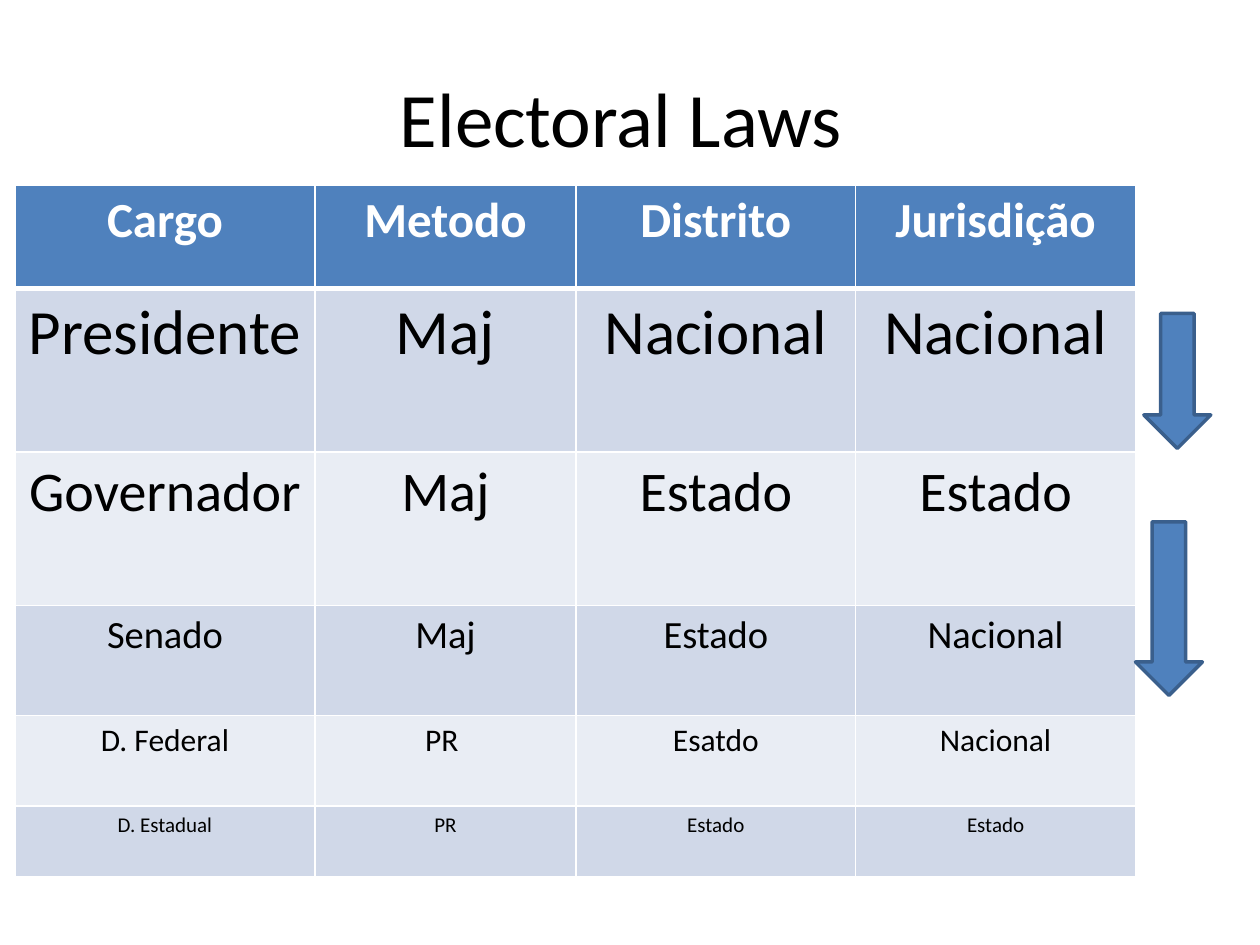
from dataclasses import dataclass

import pptx
import pptx.dml.color
import pptx.enum.shapes
import pptx.enum.text
import pptx.oxml
import pptx.oxml.ns
import pptx.slide
import pptx.table
import pptx.text.text
import pptx.util
from pptx.util import Cm


@dataclass(frozen=True)
class Theme:
    font: str = "Calibri"
    text: str = "000000"
    light: str = "FFFFFF"
    accent: str = "4F81BD"
    outline: str = "3A5F8C"
    bands: tuple[str, str] = ("D0D8E8", "E9EDF4")
    title_size: int = 44
    header_size: int = 28
    thin_border: float = 1
    header_border: float = 3
    arrow_line: float = 2


@dataclass(frozen=True)
class Row:
    height: float
    size: int
    labels: tuple[str, ...]


@dataclass(frozen=True)
class Arrow:
    left: float
    top: float
    height: float
    width: float = 1.35


THEME = Theme()
COLUMN_WIDTHS = (6.05, 5.26, 5.64, 5.64)
ROWS = (
    Row(2.08, THEME.header_size, ("Cargo", "Metodo", "Distrito", "Jurisdição")),
    Row(3.3, 36, ("Presidente", "Maj", "Nacional", "Nacional")),
    Row(3.1, 32, ("Governador", "Maj", "Estado", "Estado")),
    Row(2.21, 22, ("Senado", "Maj", "Estado", "Nacional")),
    Row(1.83, 18, ("D. Federal", "PR ", "Esatdo", "Nacional")),
    Row(1.42, 12, ("D. Estadual", "PR", "Estado", "Estado")),
)
ARROWS = (Arrow(23.06, 6.32, 2.72), Arrow(22.89, 10.52, 3.5))


def rgb(value: str) -> pptx.dml.color.RGBColor:
    return pptx.dml.color.RGBColor.from_string(value)


def write_centred(frame: pptx.text.text.TextFrame, text: str, size: int,
                  color: str, bold: bool = False) -> None:
    frame.text = text
    para = frame.paragraphs[0]
    para.alignment = pptx.enum.text.PP_ALIGN.CENTER
    for span in para.runs:
        span.font.name = THEME.font
        span.font.size = pptx.util.Pt(size)
        span.font.bold = bold
        span.font.color.rgb = rgb(color)


def add_borders(cell: pptx.table._Cell, top: float, bottom: float) -> None:
    """Draw all four cell borders; call before filling, as the schema orders them."""
    properties = cell._tc.get_or_add_tcPr()
    sides = {"L": THEME.thin_border, "R": THEME.thin_border, "T": top, "B": bottom}
    for side, points in sides.items():
        properties.append(pptx.oxml.parse_xml(
            f'<a:ln{side} {pptx.oxml.ns.nsdecls("a")} w="{pptx.util.Pt(points)}">'
            f'<a:solidFill><a:srgbClr val="{THEME.light}"/></a:solidFill></a:ln{side}>'
        ))


def add_title(page: pptx.slide.Slide, text: str) -> None:
    title = page.shapes.title
    title.left, title.top = Cm(1.27), Cm(0.76)
    title.width, title.height = Cm(22.86), Cm(3.18)
    title.text_frame.vertical_anchor = pptx.enum.text.MSO_ANCHOR.MIDDLE
    write_centred(title.text_frame, text, THEME.title_size, THEME.text)


def add_law_table(page: pptx.slide.Slide) -> None:
    table = page.shapes.add_table(
        len(ROWS), len(COLUMN_WIDTHS), Cm(0.3), Cm(3.73),
        Cm(sum(COLUMN_WIDTHS)), Cm(sum(row.height for row in ROWS)),
    ).table
    for column, width in zip(table.columns, COLUMN_WIDTHS):
        column.width = Cm(width)
    for index, row in enumerate(ROWS):
        table.rows[index].height = Cm(row.height)
        header = index == 0
        fill = THEME.accent if header else THEME.bands[(index - 1) % 2]
        top = THEME.header_border if index == 1 else THEME.thin_border
        bottom = THEME.header_border if header else THEME.thin_border
        for cell, label in zip(table.rows[index].cells, row.labels):
            add_borders(cell, top, bottom)
            cell.fill.solid()
            cell.fill.fore_color.rgb = rgb(fill)
            write_centred(cell.text_frame, label, row.size,
                          THEME.light if header else THEME.text, header)


def add_down_arrow(page: pptx.slide.Slide, arrow: Arrow) -> None:
    shape = page.shapes.add_shape(
        pptx.enum.shapes.MSO_SHAPE.DOWN_ARROW,
        Cm(arrow.left), Cm(arrow.top), Cm(arrow.width), Cm(arrow.height),
    )
    shape.shadow.inherit = False
    shape.fill.solid()
    shape.fill.fore_color.rgb = rgb(THEME.accent)
    shape.line.color.rgb = rgb(THEME.outline)
    shape.line.width = pptx.util.Pt(THEME.arrow_line)


def main() -> None:
    deck = pptx.Presentation()
    deck.slide_width, deck.slide_height = Cm(25.4), Cm(19.05)
    page = deck.slides.add_slide(deck.slide_layouts.get_by_name("Title Only"))
    add_title(page, "Electoral Laws ")
    add_law_table(page)
    for arrow in ARROWS:
        add_down_arrow(page, arrow)
    deck.save("out.pptx")


if __name__ == "__main__":
    main()
